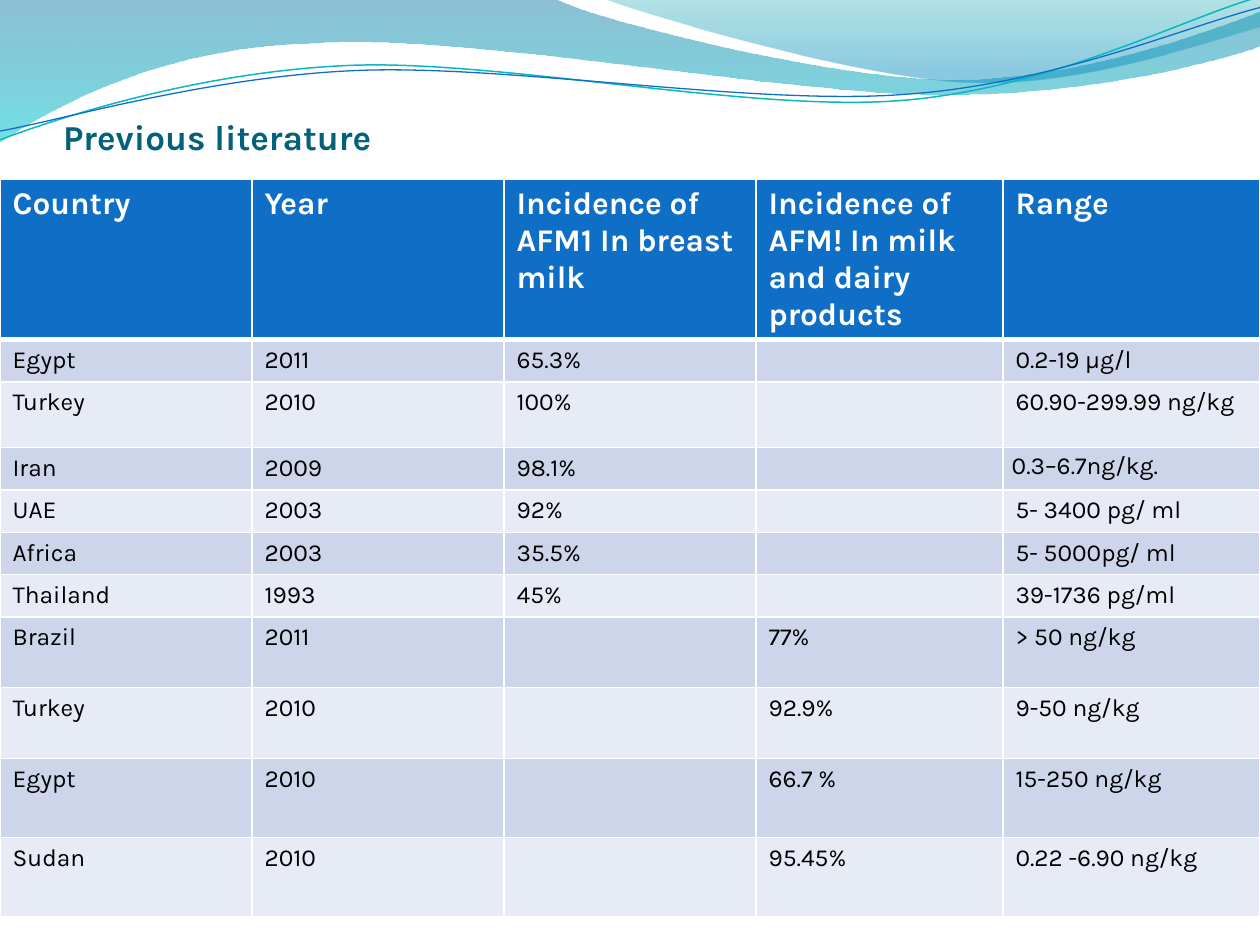
from lxml import etree
from pptx import Presentation, util as u
from pptx.dml import color
from pptx.enum import text
from pptx.oxml import ns

deck = Presentation()
deck.slide_width, deck.slide_height = u.Inches(10), u.Inches(7.5)
page = deck.slides.add_slide(deck.slide_layouts[5])


def rgb(code):
    return color.RGBColor.from_string(code)


def trace(start, parts, closed):
    """Draw a path; a part is one point for a line, three for a Bezier curve."""
    pts = [(u.Inches(x), u.Inches(y)) for x, y in [start] + sum(parts, [])]
    pen = page.shapes.build_freeform(*pts[0])
    pen.add_line_segments(pts[1:], close=closed)
    shape = pen.convert_to_shape()
    shape.shadow.inherit = False
    steps = iter(list(shape._element.iter(ns.qn("a:lnTo"))))
    for part in parts:
        lines = [next(steps) for _ in part]
        if len(part) == 3:
            bend = etree.Element(ns.qn("a:cubicBezTo"))
            lines[0].addprevious(bend)
            for line in lines:
                bend.append(line[0])
                line.getparent().remove(line)
    return shape


# Header waves: start, parts, gradient stops (place, colour, opacity)
waves = [
    ((0, 0), [
        [(4.4, -0.01)],
        [(4.76, 0.17), (6.64, 0.63), (7.58, 0.63)],
        [(8.53, 0.63), (9.58, 0.26), (10, 0.09)],
        [(10.01, 0.36)],
        [(9.83, 0.44), (8.7, 0.76), (7.46, 0.75)],
        [(6.22, 0.75), (3.82, 0.28), (2.57, 0.34)],
        [(1.29, 0.36), (0.46, 0.83), (-0.01, 1.13)],
    ], [(0, "0074A1", 45), (1, "00C6CF", 55)]),
    ((4.79, -0.01), [
        [(5.09, 0.11), (6.82, 0.62), (7.69, 0.65)],
        [(8.56, 0.69), (9.61, 0.32), (10, 0.21)],
        [(10, 0)],
    ], [(0, "00A1A9", 30), (0.8, "008BBF", 45)]),
]
for start, parts, stops in waves:
    wave = trace(start, parts, True)
    wave.line.fill.background()
    wave.fill.gradient()
    wave.fill.gradient_angle = 270
    for stop, (place, code, _) in zip(wave.fill.gradient_stops, stops):
        stop.position = place
        stop.color.rgb = rgb(code)
    for tint, (_, _, alpha) in zip(wave._element.spPr.iter(ns.qn("a:srgbClr")), stops):
        etree.SubElement(tint, ns.qn("a:alpha"), val=str(alpha * 1000))

curves = [
    ((0, 1.11), [
        [(0.48, 0.93), (1.58, 0.57), (2.77, 0.52)],
        [(3.95, 0.47), (5.93, 0.89), (7.13, 0.8)],
        [(8.33, 0.71), (9.38, 0.15), (9.98, -0.02)],
    ], "0AB8BF", 0.85),
    ((0, 1.04), [
        [(0.47, 0.96), (1.64, 0.61), (2.83, 0.56)],
        [(4.03, 0.51), (5.97, 0.84), (7.17, 0.75)],
        [(8.36, 0.67), (9.41, 0.21), (10, 0.06)],
    ], "0F6FC6", 0.75),
]
for start, parts, code, width in curves:
    curve = trace(start, parts, False)
    curve.fill.background()
    curve.line.color.rgb = rgb(code)
    curve.line.width = u.Pt(width)

# Title, in front of the waves
title = page.shapes.title
page.shapes._spTree.append(title._element)
title.left, title.top = u.Inches(0.5), u.Inches(0.77)
title.width, title.height = u.Inches(9), u.Inches(0.48)
frame = title.text_frame
frame.text = "Previous literature"
frame.vertical_anchor = text.MSO_ANCHOR.BOTTOM
frame.margin_left = frame.margin_right = frame.margin_bottom = 0
frame.margin_top = u.Inches(0.05)
frame.paragraphs[0].alignment = text.PP_ALIGN.LEFT
font = frame.paragraphs[0].runs[0].font
font.name, font.size, font.bold = "Karla", u.Pt(20), True
font.color.rgb = rgb("04617B")

# Table
rows = [
    ("Country", "Year", "Incidence of AFM1 In breast milk",
     "Incidence of AFM! In milk and dairy products", "Range"),
    ("Egypt", "2011", "65.3%", "", "0.2-19 μg/l"),
    ("Turkey", "2010", "100%", "", "60.90-299.99 ng/kg"),
    ("Iran", "2009", "98.1%", "", "0.3–6.7ng/kg."),
    ("UAE", "2003", "92%", "", "5- 3400 pg/ ml"),
    ("Africa", "2003", "35.5%", "", "5- 5000pg/ ml"),
    ("Thailand", "1993", "45%", "", "39-1736 pg/ml"),
    ("Brazil", "2011", "", "77%", "> 50 ng/kg"),
    ("Turkey", "2010", "", "92.9%", "9-50 ng/kg"),
    ("Egypt", "2010", "", "66.7 %", "15-250 ng/kg"),
    ("Sudan", "2010", "", "95.45%", "0.22 -6.90 ng/kg"),
]
wide = [2, 2, 2, 1.96, 2.04]
high = [1.26, 0.32, 0.52] + [0.32] * 4 + [0.56] * 2 + [0.63] * 2
grid = page.shapes.add_table(len(rows), len(wide), 0, u.Inches(1.42),
                             u.Inches(sum(wide)), u.Inches(sum(high))).table
for col, w in zip(grid.columns, wide):
    col.width = u.Inches(w)
for r, (row, h) in enumerate(zip(rows, high)):
    grid.rows[r].height = u.Inches(h)
    head = r == 0
    size = 18 if head else 14
    for c, word in enumerate(row):
        cell = grid.cell(r, c)
        cell.text_frame.text = word
        cell.fill.solid()
        cell.fill.fore_color.rgb = rgb("0F6FC6" if head else ("E7EBF5", "CCD5EA")[r % 2])
        para = cell.text_frame.paragraphs[0]
        for run in para.runs:
            font = run.font
            font.name, font.size, font.bold = "Karla", u.Pt(size), head
            font.color.rgb = rgb("FFFFFF" if head else "000000")
        if not word:
            para._p.get_or_add_endParaRPr().set("sz", str(size * 100))
        props = cell._tc.get_or_add_tcPr()
        for n, side in enumerate("LRTB"):
            thick = 3 if (r, side) in [(0, "B"), (1, "T")] else 1
            edge = etree.Element(ns.qn("a:ln" + side), w=str(u.Pt(thick)))
            ink = etree.SubElement(edge, ns.qn("a:solidFill"))
            etree.SubElement(ink, ns.qn("a:srgbClr"), val="FFFFFF")
            props.insert(n, edge)

iran = grid.cell(3, 4)
iran.margin_left = iran.margin_right = u.Inches(0.07)
iran.margin_top = iran.margin_bottom = 0
iran.text_frame.paragraphs[0].line_spacing = 1.15

deck.save("out.pptx")
